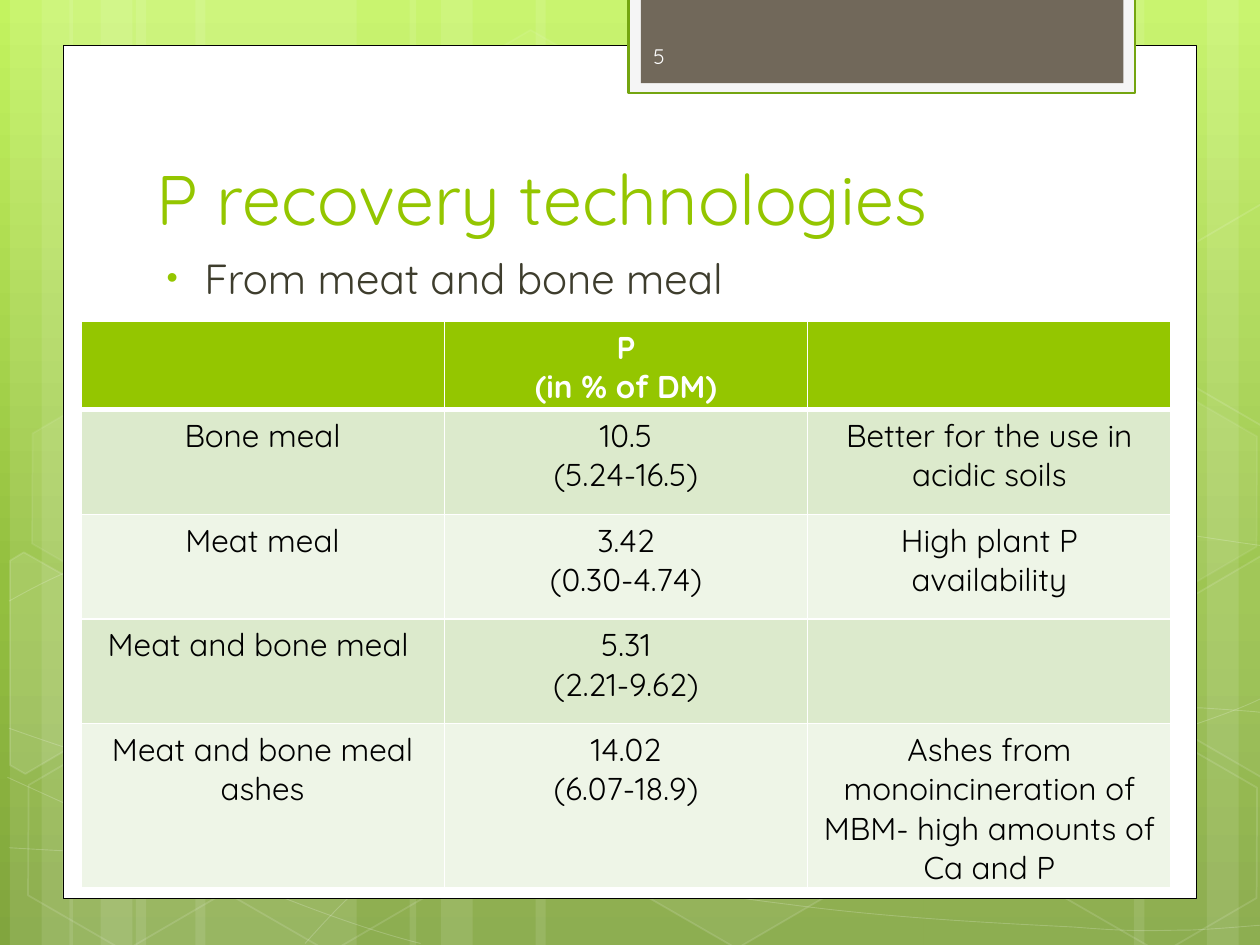
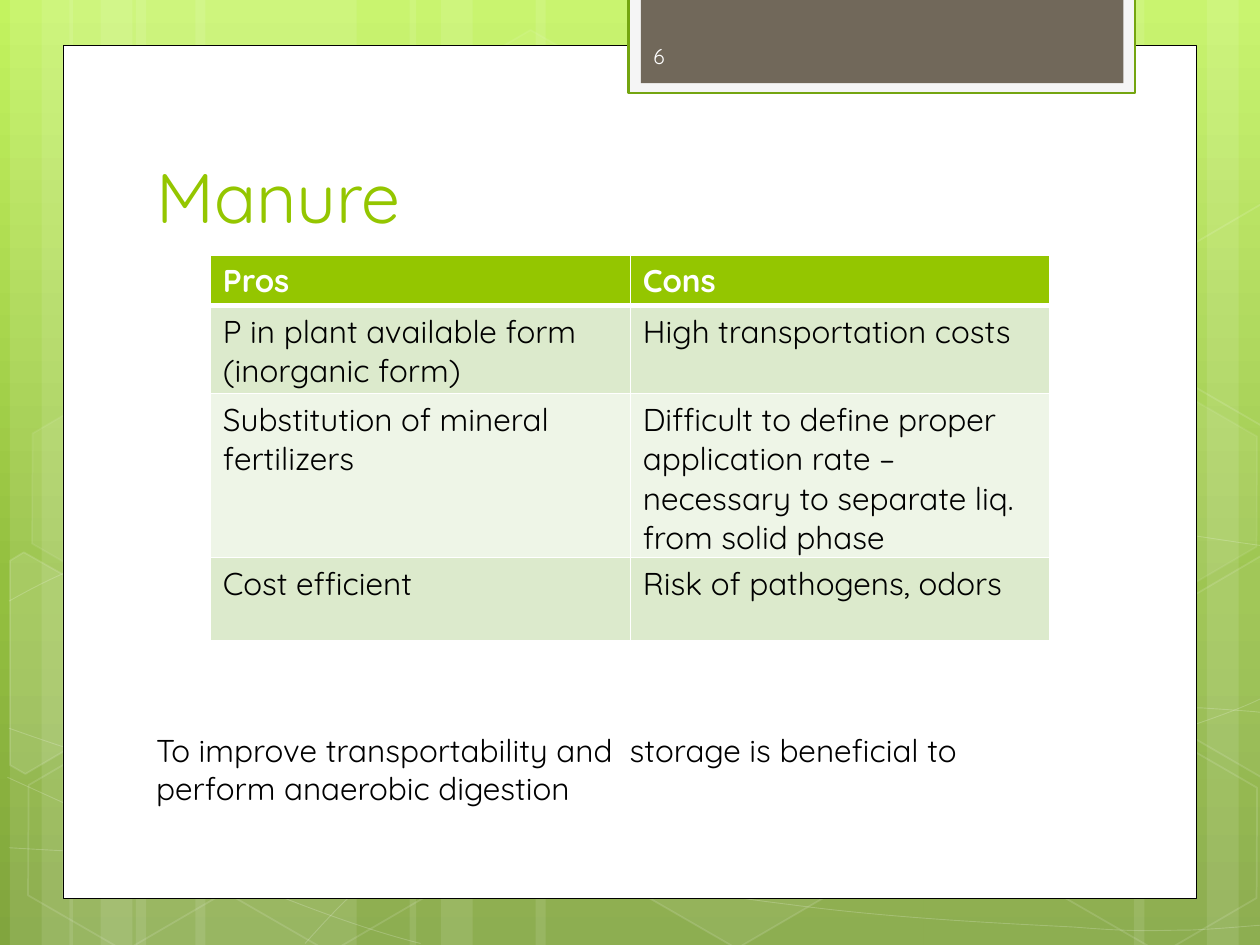
from copy import deepcopy
from dataclasses import dataclass
from math import cos, radians, sin

from lxml.etree import SubElement
from pptx import Presentation
from pptx.dml.color import RGBColor
from pptx.enum.shapes import MSO_SHAPE as Preset
from pptx.enum.text import MSO_ANCHOR as Anchor, PP_ALIGN as Align
from pptx.oxml.ns import qn
from pptx.util import Cm, Pt

WIDTH, HEIGHT = 25.4, 19.05
FONT = "Quicksand"
COLORS = {
    "white": "FFFFFF", "black": "000000", "lime": "94C600", "olive": "3E3D2D",
    "tab": "71685A", "tab_rim": "F5F5F5", "tab_edge": "74A510", "number": "FEFEFE",
    "row_odd": "DCEACC", "row_even": "EEF5E7",
    "sky": "C3F35F", "meadow": "93BF3F", "moss": "81A53E",
}
BACKDROP_STOPS = [(0, "sky"), (0.62, "meadow"), (1, "moss")]


# Records, all lengths in centimetres
@dataclass
class Box:
    left: float
    top: float
    width: float
    height: float

    def lengths(self) -> list:
        return [Cm(v) for v in (self.left, self.top, self.width, self.height)]


@dataclass
class Paint:
    fill: str | None = None
    fill_alpha: int = 100
    line: str | None = None
    line_width: float = 1
    line_alpha: int = 100


@dataclass
class Hexagon:
    left: float
    top: float
    fill_alpha: int
    line_alpha: int = 12


@dataclass
class Grid:
    box: Box
    row_heights: list
    rows: list
    align: Align


@dataclass
class TextStyle:
    size: float
    color: str
    bold: bool = False
    align: Align = Align.LEFT


# Backdrop geometry: strips as (left, width), waves as Bézier points
NARROW, MEDIUM, BROAD = 1.27, 2.11, 4.45
STRIPS = [
    (2.74, BROAD), (0.2, NARROW), (0.84, MEDIUM), (3.94, BROAD), (1.4, NARROW), (2.03, MEDIUM),
    (18.62, BROAD), (24.33, NARROW), (22.86, MEDIUM), (10.8, 7.82), (8.26, NARROW), (8.89, MEDIUM),
]
WAVES = [
    [(0.18, 17.09), (1.55, 17.17), (2.92, 17.25), (4.83, 17.22), (6.73, 17.2), (9.09, 17.15),
     (11.63, 16.89), (14.17, 16.64), (17.78, 16.15), (20.12, 15.67), (22.43, 15.19),
     (24.82, 14.43), (25.58, 14)],
    [(0.18, 12.12), (0.91, 11.71), (1.65, 11.33), (3.07, 10.95), (4.52, 10.57), (6.58, 10.01),
     (8.81, 9.83), (11.07, 9.65), (13.82, 9.63), (16.61, 9.83), (19.41, 10.03),
     (24.05, 10.82), (25.58, 11.02)],
    [(0.15, 15.67), (3.23, 17.07), (6.27, 18.47), (8.48, 19.02)],
    [(0.18, 14.68), (0.97, 14.96), (1.78, 15.24), (3.25, 15.65), (4.72, 16.03), (6.93, 16.66),
     (9.07, 17.09), (11.18, 17.53), (13.84, 17.98), (15.95, 18.24), (18.06, 18.52),
     (20.32, 18.62), (21.67, 18.69), (22.99, 18.8), (23.34, 18.75), (24, 18.75),
     (24.66, 18.72), (25.12, 18.67), (25.58, 18.64)],
    [(6.15, 19.02), (6.6, 18.52), (7.06, 18.01), (7.67, 17.55), (8.28, 17.09), (9.14, 16.59),
     (9.86, 16.23), (10.57, 15.88), (11, 15.72), (11.94, 15.47), (12.85, 15.21), (14.55, 14.86),
     (15.44, 14.68), (16.36, 14.5), (16.48, 14.5), (17.27, 14.45), (18.06, 14.38), (19.3, 14.3),
     (20.17, 14.27), (21.06, 14.25), (22.5, 14.27), (22.5, 14.27), (23.07, 14.27),
     (23.64, 14.27), (24.21, 14.27), (24.66, 14.3), (25.1, 14.33), (25.32, 14.35),
     (25.55, 14.38), (25.48, 14.35), (25.55, 14.38)],
]
TILT = 30
HEXAGONS = [
    Hexagon(8.48, 0.91, 4, 8), Hexagon(12.62, 14.96, 6), Hexagon(0.28, 15.01, 0),
    Hexagon(0.36, 7.92, 7, 8), Hexagon(4.42, 15.04, 0), Hexagon(19.13, 11.51, 10),
    Hexagon(21.18, 15.06, 0), Hexagon(21.18, 7.98, 7, 8),
]
LEFT_CUT = [(0.2, 11.3), (0.48, 11.13), (2.44, 12.24), (2.41, 14.48), (0.51, 15.6), (0.2, 15.42)]
RIGHT_CUT = [(23.52, 12.32), (25.43, 11.2), (25.63, 11.33), (25.63, 15.57), (25.45, 15.67),
             (23.52, 14.55)]
UPPER_RIGHT_CUT = [(x, y - 7.09) for x, y in RIGHT_CUT]
CUT_HEXAGONS = [  # corners, centre, fill alpha
    (LEFT_CUT, (0.91, 13.59), 10),
    (RIGHT_CUT, (25.02, 13.21), 4),
    (UPPER_RIGHT_CUT, (25.02, 6.12), 0),
]

# Panel and number tab
FRAMES = [
    (Box(1.27, 0.91, 22.86, 17.2), Paint("white", line="black", line_width=0.5)),
    (Box(12.67, -0.05, 10.21, 1.93), Paint("tab_rim", line="tab_edge", line_width=1.25)),
    (Box(12.92, -0.05, 9.73, 1.73), Paint("tab")),
]
NUMBER_BOX = Box(12.92, 0.62, 3.71, 1.02)

TITLE = TextStyle(40, "lime")
BULLET = TextStyle(24, "olive")
NOTE = TextStyle(18, "black")
NUMBER = TextStyle(12, "number")


def rgb(name: str) -> RGBColor:
    return RGBColor.from_string(COLORS[name])


def assign(target, values: dict) -> None:
    for name, value in values.items():
        setattr(target, name, value)


def set_alpha(fill_parent, percent: int) -> None:
    color = fill_parent.find(f"{qn('a:solidFill')}/{qn('a:srgbClr')}")
    if percent < 100:
        SubElement(color, qn("a:alpha")).set("val", str(percent * 1000))


def paint_shape(shape, paint: Paint) -> None:
    shape.shadow.inherit = False
    properties = shape.element.spPr
    if paint.fill and paint.fill_alpha:
        shape.fill.solid()
        shape.fill.fore_color.rgb = rgb(paint.fill)
        set_alpha(properties, paint.fill_alpha)
    else:
        shape.fill.background()
    if paint.line:
        shape.line.color.rgb = rgb(paint.line)
        shape.line.width = Pt(paint.line_width)
        set_alpha(properties.find(qn("a:ln")), paint.line_alpha)
    else:
        shape.line.fill.background()


def add_preset(slide, preset: Preset, box: Box, paint: Paint):
    shape = slide.shapes.add_shape(preset, *box.lengths())
    paint_shape(shape, paint)
    return shape


def add_outline(slide, points: list, paint: Paint, close: bool):
    start, *rest = [(Cm(x), Cm(y)) for x, y in points]
    builder = slide.shapes.build_freeform(*start)
    builder.add_line_segments(rest, close=close)
    shape = builder.convert_to_shape()
    paint_shape(shape, paint)
    return shape


def add_wave(slide, points: list) -> None:
    wave = add_outline(slide, points, Paint(line="white", line_width=0.5, line_alpha=20), False)
    outline = wave.element.find(f".//{qn('a:path')}")
    segments = outline.findall(qn("a:lnTo"))
    for first in range(0, len(segments), 3):
        curve = SubElement(outline, qn("a:cubicBezTo"))
        for segment in segments[first:first + 3]:
            curve.append(segment[0])
            outline.remove(segment)


def turn_back(points: list, centre: tuple) -> list:
    c, s = cos(radians(TILT)), sin(radians(TILT))
    cx, cy = centre
    return [(cx + (x - cx) * c + (y - cy) * s, cy - (x - cx) * s + (y - cy) * c)
            for x, y in points]


def write_lines(frame, text: str, style: TextStyle) -> None:
    font_values = {"name": FONT, "size": Pt(style.size), "bold": style.bold}
    for index, line in enumerate(text.split("\n")):
        paragraph = frame.add_paragraph() if index else frame.paragraphs[0]
        paragraph.alignment = style.align
        run = paragraph.add_run()
        run.text = line
        assign(run.font, font_values)
        run.font.color.rgb = rgb(style.color)


def add_text(slide, box: Box, text: str, style: TextStyle, anchor: Anchor = Anchor.TOP):
    frame = slide.shapes.add_textbox(*box.lengths()).text_frame
    assign(frame, {"word_wrap": True, "vertical_anchor": anchor})
    write_lines(frame, text, style)
    return frame


def add_bullet(slide, box: Box, text: str) -> None:
    properties = add_text(slide, box, text, BULLET).paragraphs[0]._p.get_or_add_pPr()
    for name, value in {"marL": Cm(0.97), "indent": Cm(-0.76)}.items():
        properties.set(name, str(int(value)))
    color = SubElement(properties, qn("a:buClr"))
    SubElement(color, qn("a:srgbClr")).set("val", COLORS["lime"])
    SubElement(properties, qn("a:buSzPct")).set("val", "76000")
    SubElement(properties, qn("a:buFont")).set("typeface", "Arial")
    SubElement(properties, qn("a:buChar")).set("char", "•")


def add_borders(cell, widths: dict) -> None:
    properties = cell._tc.get_or_add_tcPr()
    for side, width in widths.items():
        line = SubElement(properties, qn(f"a:ln{side}"), w=str(int(Pt(width))))
        fill = SubElement(line, qn("a:solidFill"))
        SubElement(fill, qn("a:srgbClr")).set("val", COLORS["white"])


def add_grid(slide, grid: Grid) -> None:
    holder = slide.shapes.add_table(len(grid.rows), len(grid.rows[0]), *grid.box.lengths())
    table = holder.table
    for r, (height, texts) in enumerate(zip(grid.row_heights, grid.rows)):
        table.rows[r].height = Cm(height)
        header = r == 0
        band = "lime" if header else "row_odd" if r % 2 else "row_even"
        style = TextStyle(18, "white" if header else "black", header, grid.align)
        for c, text in enumerate(texts):
            cell = table.cell(r, c)
            add_borders(cell, {"L": 1, "R": 1, "T": 3 if r == 1 else 1, "B": 3 if header else 1})
            cell.fill.solid()
            cell.fill.fore_color.rgb = rgb(band)
            if text:
                write_lines(cell.text_frame, text, style)
    holder.height = Cm(grid.box.height)


def add_backdrop(slide) -> None:
    # Gradient
    fill = slide.background.fill
    fill.gradient()
    fill.gradient_angle = 270
    stop_list = slide.element.find(f".//{qn('a:gsLst')}")
    stop_list.append(deepcopy(stop_list[-1]))
    for stop, (position, color) in zip(fill.gradient_stops, BACKDROP_STOPS):
        stop.position = position
        stop.color.rgb = rgb(color)
    # Light strips, waves and hexagons
    for left, width in STRIPS:
        add_preset(slide, Preset.RECTANGLE, Box(left, 0, width, HEIGHT), Paint("white", 10))
    for points in WAVES:
        add_wave(slide, points)
    for item in HEXAGONS:
        hexagon = add_preset(slide, Preset.HEXAGON, Box(item.left, item.top, 4.45, 3.86),
                             Paint("white", item.fill_alpha, "white", 1, item.line_alpha))
        hexagon.rotation = TILT
        hexagon.adjustments[0], hexagon.adjustments[1] = 0.285, 1.155
    for corners, centre, alpha in CUT_HEXAGONS:
        paint = Paint("white", alpha, "white", 1, 12)
        add_outline(slide, turn_back(corners, centre), paint, True).rotation = TILT
    # Panel and tab
    for box, paint in FRAMES:
        add_preset(slide, Preset.RECTANGLE, box, paint)


def add_page(deck, title: str, title_box: Box):
    slide = deck.slides.add_slide(deck.slide_layouts[6])
    add_backdrop(slide)
    add_text(slide, title_box, title, TITLE, Anchor.BOTTOM)
    return slide


MEALS = Grid(Box(1.63, 6.48, 21.98, 11.43), [1.14] + [2.11] * 4, [
    ["", "P\n(in % of DM)", ""],
    ["Bone meal", "10.5\n(5.24-16.5)", "Better for the use in acidic soils"],
    ["Meat meal", "3.42\n(0.30-4.74)", "High plant P availability"],
    ["Meat and bone meal ", "5.31\n(2.21-9.62)", ""],
    ["Meat and bone meal ashes", "14.02\n(6.07-18.9)",
     "Ashes from monoincineration of MBM- high amounts of Ca and P"],
], Align.CENTER)
MANURE = Grid(Box(4.24, 5.14, 16.93, 7.77), [0.97, 1.68, 3.1, 1.68], [
    ["Pros", "Cons"],
    ["P in plant available form (inorganic form)", "High transportation costs"],
    ["Substitution of mineral fertilizers", "Difficult to define proper application rate – "
     "necessary to separate liq. from solid phase"],
    ["Cost efficient", "Risk of pathogens, odors"],
], Align.LEFT)
DIGESTION = "To improve transportability and  storage is beneficial to perform anaerobic digestion"


def main() -> None:
    deck = Presentation()
    assign(deck, {"slide_width": Cm(WIDTH), "slide_height": Cm(HEIGHT)})

    recovery = add_page(deck, "P recovery technologies", Box(2.9, 2.82, 19.51, 2.13))
    add_bullet(recovery, Box(2.9, 4.97, 18.82, 9.75), "From meat and bone meal")
    add_grid(recovery, MEALS)

    manure = add_page(deck, "Manure", Box(2.9, 2.68, 19.51, 2.24))
    add_grid(manure, MANURE)
    add_text(manure, Box(2.9, 14.62, 18.82, 1.8), DIGESTION, NOTE)

    for number, slide in enumerate([recovery, manure], start=5):
        add_text(slide, NUMBER_BOX, str(number), NUMBER, Anchor.MIDDLE)
    deck.save("out.pptx")


if __name__ == "__main__":
    main()
